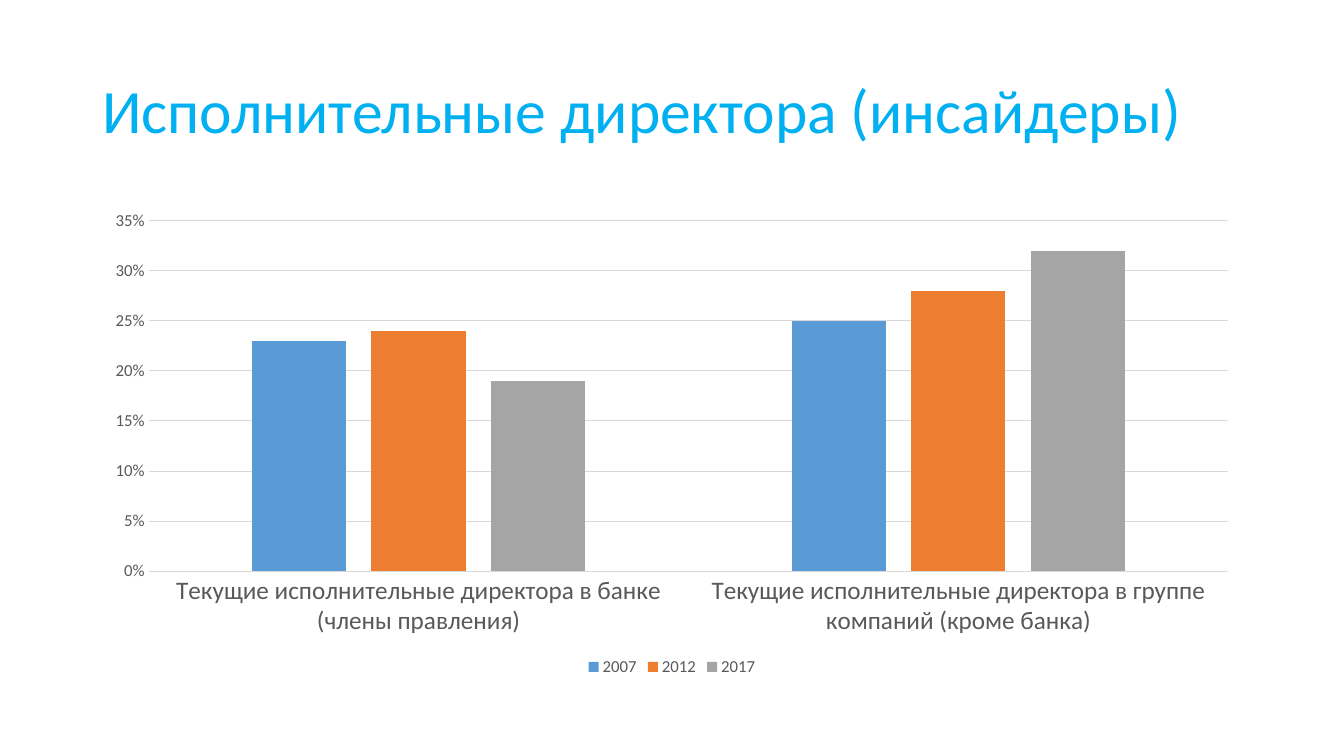
"""Build a slide with a column chart of executive directors by year."""
from pptx import Presentation
from pptx.chart.data import CategoryChartData
from pptx.dml.color import RGBColor
from pptx.enum.chart import XL_CHART_TYPE as ChartType
from pptx.enum.chart import XL_LEGEND_POSITION as LegendPosition
from pptx.enum.chart import XL_TICK_MARK as TickMark
from pptx.enum.text import MSO_ANCHOR as Anchor
from pptx.util import Cm, Pt

TITLE = "Исполнительные директора (инсайдеры)"
CATEGORIES = [
    "Текущие исполнительные директора в банке (члены правления)",
    "Текущие исполнительные директора в группе компаний (кроме банка)",
]
SERIES = {"2007": (0.23, 0.25), "2012": (0.24, 0.28), "2017": (0.19, 0.32)}
COLORS = {
    "title": "00B0F0",
    "label": "595959",
    "grid": "D9D9D9",
    "2007": "5B9BD5",
    "2012": "ED7D31",
    "2017": "A5A5A5",
}
FONT = "Calibri"
LEFT, WIDTH = Cm(2.33), Cm(29.21)


def color(name):
    return RGBColor.from_string(COLORS[name])


def style_font(font, size, name):
    font.name, font.size, font.bold = FONT, Pt(size), False
    font.color.rgb = color(name)


def style_line(line):
    line.color.rgb = color("grid")
    line.width = Pt(0.75)


def add_text(page, text, *, top, height, size, name):
    box = page.shapes.add_textbox(LEFT, top, WIDTH, height)
    frame = box.text_frame
    frame.word_wrap = True
    frame.vertical_anchor = Anchor.MIDDLE
    para = frame.paragraphs[0]
    para.line_spacing = 0.9
    span = para.add_run()
    span.text = text
    style_font(span.font, size, name)


def add_columns(page, top, height):
    data = CategoryChartData(number_format="0%")
    data.categories = CATEGORIES
    for year, values in SERIES.items():
        data.add_series(year, values)
    chart = page.shapes.add_chart(
        ChartType.COLUMN_CLUSTERED, LEFT, top, WIDTH, height, data
    ).chart
    style_font(chart.font, 10, "label")
    chart.has_title = False

    plot = chart.plots[0]
    plot.gap_width, plot.overlap, plot.vary_by_categories = 219, -27, False
    for series in plot.series:
        series.format.fill.solid()
        series.format.fill.fore_color.rgb = color(series.name)

    for axis, size in ((chart.category_axis, 18), (chart.value_axis, 12)):
        axis.major_tick_mark = axis.minor_tick_mark = TickMark.NONE
        style_font(axis.tick_labels.font, size, "label")
    style_line(chart.category_axis.format.line)

    scale = chart.value_axis
    scale.minimum_scale, scale.maximum_scale, scale.major_unit = 0, 0.35, 0.05
    scale.tick_labels.number_format = "0%"
    scale.tick_labels.number_format_is_linked = False
    scale.format.line.fill.background()
    style_line(scale.major_gridlines.format.line)

    chart.has_legend = True
    chart.legend.position = LegendPosition.BOTTOM
    chart.legend.include_in_layout = False
    style_font(chart.legend.font, 12, "label")


def main():
    deck = Presentation()
    deck.slide_width, deck.slide_height = Cm(33.87), Cm(19.05)
    page = deck.slides.add_slide(deck.slide_layouts[6])
    add_text(page, TITLE, top=Cm(1.01), height=Cm(3.68), size=44, name="title")
    add_columns(page, top=Cm(5.07), height=Cm(12.09))
    deck.save("out.pptx")


if __name__ == "__main__":
    main()
